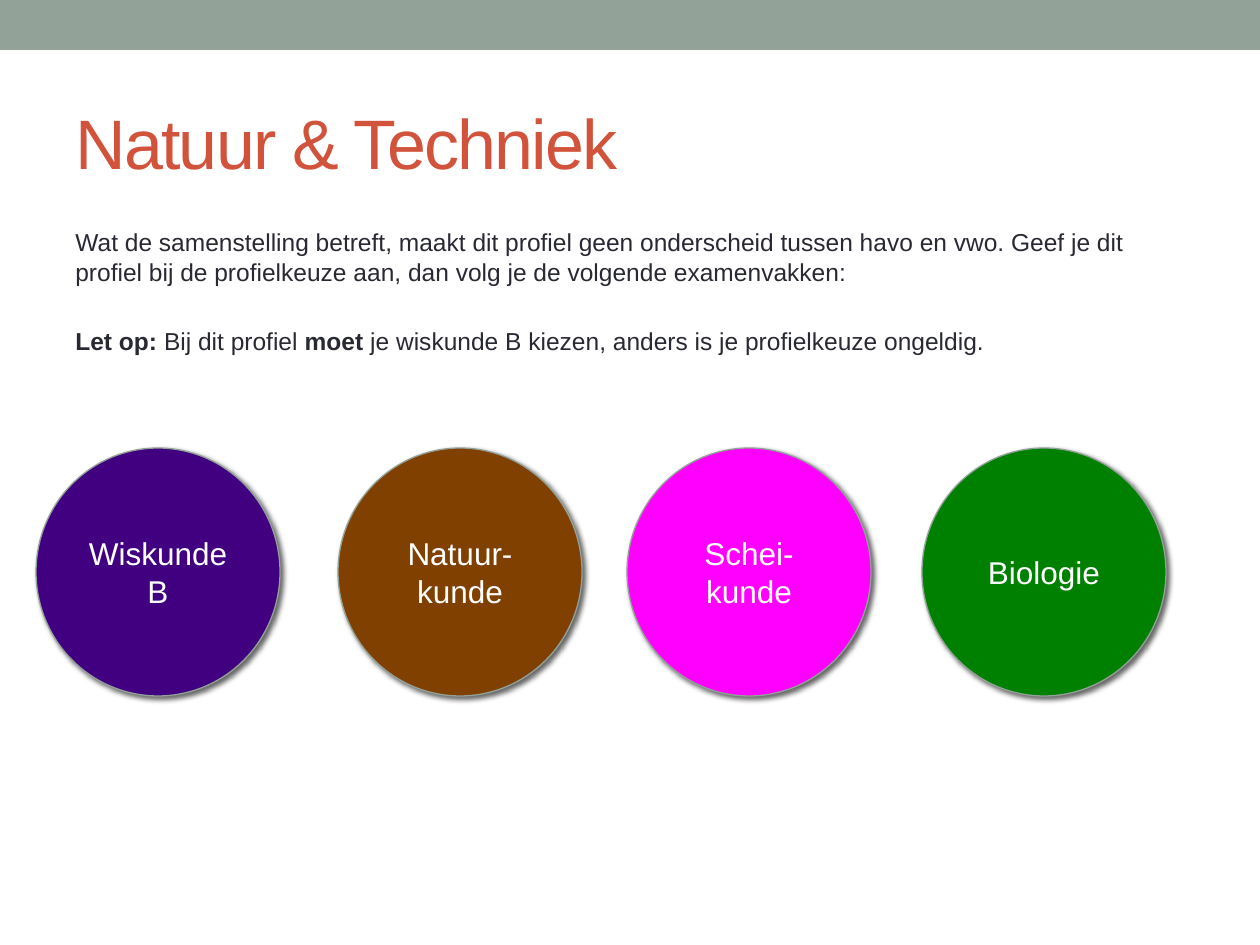
"""Build the Natuur & Techniek slide with its four exam subjects."""
import lxml.etree
import pptx
import pptx.dml.color
import pptx.enum.shapes
import pptx.enum.text
import pptx.oxml.ns
import pptx.util

TITLE = "Natuur & Techniek"
BODY = [
    [("Wat de samenstelling betreft, maakt dit profiel geen onderscheid tussen "
      "havo en vwo. Geef je dit profiel bij de profielkeuze aan, dan volg je de "
      "volgende examenvakken:", False)],
    [("Let op: ", True), ("Bij dit profiel ", False), ("moet", True),
     (" je wiskunde B kiezen, anders is je profielkeuze ongeldig.", False)],
]
SUBJECTS = [
    ("Wiskunde B", 36, "400080"),
    ("Natuur-kunde", 338, "804000"),
    ("Schei-kunde", 627, "FF00FF"),
    ("Biologie", 922, "008000"),
]
THEME = {
    "font": "Arial", "accent": "93A299", "title": "D2533C",
    "body": "292934", "label": "FFFFFF", "shadow": "000000",
    "title_size": 40, "body_size": 14, "label_size": 18,
}
PX = 914400 / 126
WIDTH, HEIGHT, BAR_HEIGHT = 1260, 945, 50
TITLE_BOX = (63, 73, 1134, 136)
BODY_BOX = (63, 221, 1134, 171)
BODY_GAPS = (3, 23)
CIRCLE_TOP, CIRCLE_WIDTH, CIRCLE_HEIGHT = 448, 244, 248
MSO = pptx.enum.shapes.MSO_SHAPE
ANCHOR = pptx.enum.text.MSO_ANCHOR
ALIGN = pptx.enum.text.PP_ALIGN


def px(n):
    return pptx.util.Emu(round(n * PX))


def rgb(name):
    return pptx.dml.color.RGBColor.from_string(name)


def add_run(p, text, role, bold=False):
    r = p.add_run()
    r.text = text
    style = {"name": THEME["font"], "bold": bold,
             "size": pptx.util.Pt(THEME[role + "_size"])}
    for key, value in style.items():
        setattr(r.font, key, value)
    r.font.color.rgb = rgb(THEME[role])
    return r


def add_text_box(s, box, anchor):
    tf = s.shapes.add_textbox(*map(px, box)).text_frame
    for key, value in {"word_wrap": True, "vertical_anchor": anchor}.items():
        setattr(tf, key, value)
    return tf


def add_solid(s, kind, box, color):
    sp = s.shapes.add_shape(kind, *map(px, box))
    sp.shadow.inherit = False
    sp.fill.solid()
    sp.fill.fore_color.rgb = rgb(color)
    return sp


def add_shadow(sp):
    qn = pptx.oxml.ns.qn
    effects = sp._element.spPr.find(qn("a:effectLst"))
    shadow = lxml.etree.SubElement(
        effects, qn("a:outerShdw"), blurRad=str(pptx.util.Pt(3)),
        dist=str(pptx.util.Pt(2)), dir="2700000", algn="tl", rotWithShape="0")
    color = lxml.etree.SubElement(shadow, qn("a:srgbClr"), val=THEME["shadow"])
    lxml.etree.SubElement(color, qn("a:alpha"), val="60000")


def add_subject(s, name, left, color):
    box = (left, CIRCLE_TOP, CIRCLE_WIDTH, CIRCLE_HEIGHT)
    sp = add_solid(s, MSO.OVAL, box, color)
    sp.line.color.rgb = rgb(THEME["accent"])
    sp.line.width = pptx.util.Pt(0.75)
    add_shadow(sp)
    tf = sp.text_frame
    for key, value in {"word_wrap": True, "vertical_anchor": ANCHOR.MIDDLE}.items():
        setattr(tf, key, value)
    p = tf.paragraphs[0]
    p.alignment = ALIGN.CENTER
    add_run(p, name, "label")


def main():
    prs = pptx.Presentation()
    prs.slide_width, prs.slide_height = px(WIDTH), px(HEIGHT)
    s = prs.slides.add_slide(prs.slide_layouts[6])

    bar = add_solid(s, MSO.RECTANGLE, (0, 0, WIDTH, BAR_HEIGHT), THEME["accent"])
    bar.line.fill.background()

    tf = add_text_box(s, TITLE_BOX, ANCHOR.MIDDLE)
    r = add_run(tf.paragraphs[0], TITLE, "title")
    r.font._element.set("spc", "-100")

    tf = add_text_box(s, BODY_BOX, ANCHOR.TOP)
    for i, (runs, gap) in enumerate(zip(BODY, BODY_GAPS)):
        p = tf.add_paragraph() if i else tf.paragraphs[0]
        p.space_before = pptx.util.Pt(gap)
        for text, bold in runs:
            add_run(p, text, "body", bold)

    for subject in SUBJECTS:
        add_subject(s, *subject)

    prs.save("out.pptx")


if __name__ == "__main__":
    main()
